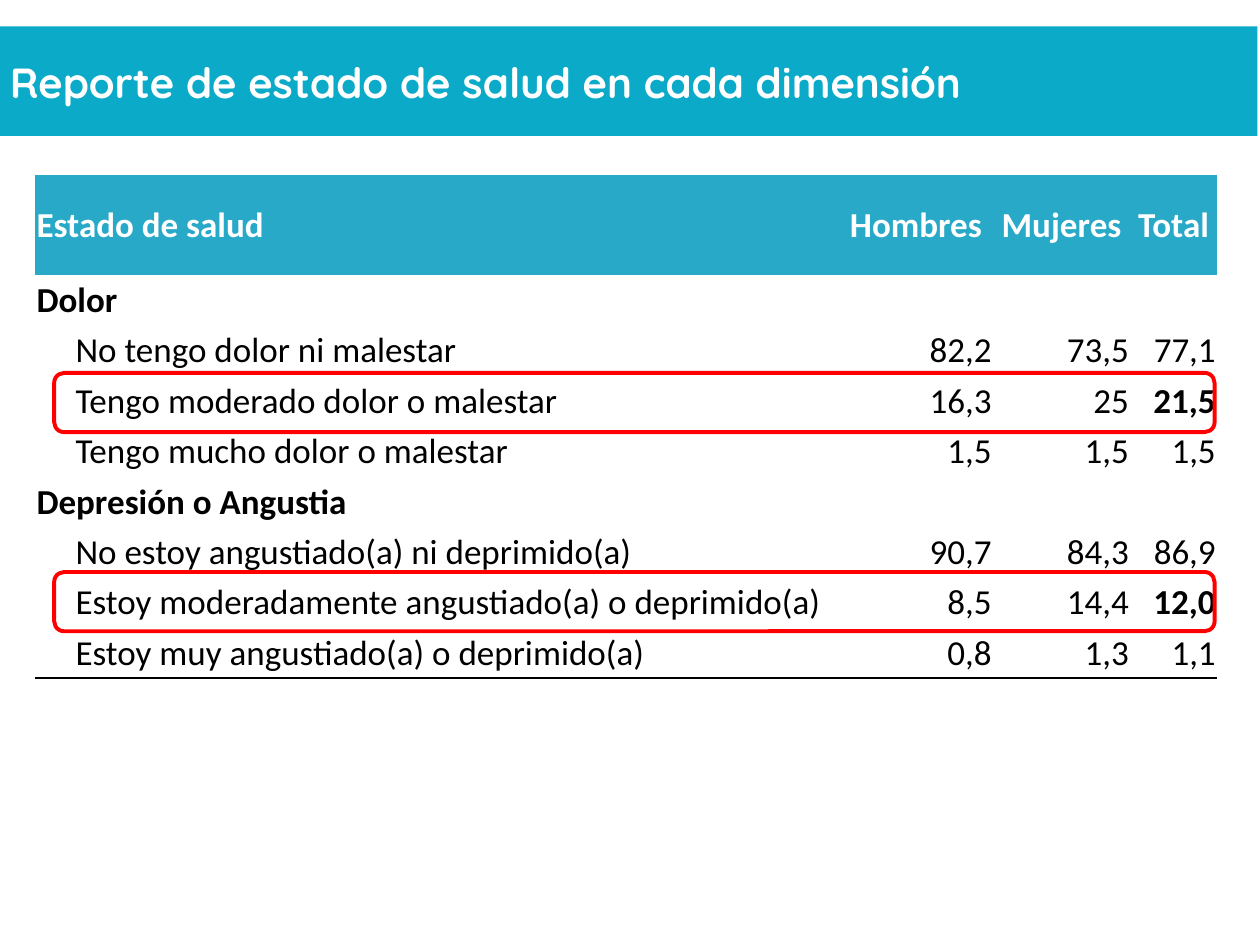
from lxml import etree
from pptx import Presentation
from pptx.dml.color import RGBColor
from pptx.enum import shapes, text
from pptx.oxml import ns
from pptx.util import Inches, Pt

TITLE = "Reporte de estado de salud en cada dimensión"
HEADER = ("Estado de salud", "Hombres", "Mujeres", "Total")
SECTIONS = {
    "Dolor": [
        ("No tengo dolor ni malestar", "82,2", "73,5", "77,1"),
        ("Tengo moderado dolor o malestar", "16,3", "25", "21,5"),
        ("Tengo mucho dolor o malestar", "1,5", "1,5", "1,5"),
    ],
    "Depresión o Angustia": [
        ("No estoy angustiado(a) ni deprimido(a)", "90,7", "84,3", "86,9"),
        ("Estoy moderadamente angustiado(a) o deprimido(a)", "8,5", "14,4", "12,0"),
        ("Estoy muy angustiado(a) o deprimido(a)", "0,8", "1,3", "1,1"),
    ],
}
HIGHLIGHTED_TOTALS = ("21,5", "12,0")
HIGHLIGHT_TOPS = (2.96, 4.54)
COLUMN_WIDTHS = (6.38, 1.22, 1.09, 0.69)
HEADER_HEIGHT, ROW_HEIGHT = 0.79, 0.4
INDENT = 0.32

TITLE_BLUE = RGBColor(0x0A, 0xAA, 0xC8)
HEADER_BLUE = RGBColor(0x28, 0xA9, 0xC8)
WHITE = RGBColor(0xFF, 0xFF, 0xFF)
BLACK = RGBColor(0, 0, 0)
RED = RGBColor(0xFF, 0, 0)
NO_STYLE = "{2D5ABB26-0587-4C30-8999-92F81FD0307C}"

LEFT, CENTER, RIGHT = text.PP_ALIGN.LEFT, text.PP_ALIGN.CENTER, text.PP_ALIGN.RIGHT


def set_attributes(target, values):
    for name, value in values.items():
        setattr(target, name, value)


def write(frame, words, alignment, color, size, name, bold):
    paragraph = frame.paragraphs[0]
    paragraph.alignment = alignment
    run = paragraph.add_run()
    run.text = words
    set_attributes(run.font, {"size": Pt(size), "name": name, "bold": bold})
    run.font.color.rgb = color


def add_box(slide, kind, left, top, width, height):
    shape = slide.shapes.add_shape(
        kind, Inches(left), Inches(top), Inches(width), Inches(height))
    shape.shadow.inherit = False
    return shape


def add_title(slide):
    banner = add_box(slide, shapes.MSO_SHAPE.RECTANGLE, -0.02, 0.21, 10, 0.87)
    banner.fill.solid()
    banner.fill.fore_color.rgb = TITLE_BLUE
    banner.line.fill.background()
    banner.text_frame.vertical_anchor = text.MSO_ANCHOR.MIDDLE
    write(banner.text_frame, TITLE, LEFT, WHITE, 24, "Quicksand", True)


def add_bottom_border(cell):
    line = etree.Element(ns.qn("a:lnB"), w=str(Pt(1)))
    fill = etree.SubElement(line, ns.qn("a:solidFill"))
    etree.SubElement(fill, ns.qn("a:srgbClr"), val=str(BLACK))
    cell._tc.get_or_add_tcPr().insert(0, line)


def add_health_table(slide):
    rows = [HEADER]
    for section, answers in SECTIONS.items():
        rows += [(section, "", "", ""), *answers]
    height = HEADER_HEIGHT + ROW_HEIGHT * (len(rows) - 1)
    frame = slide.shapes.add_table(
        len(rows), len(HEADER), Inches(0.28), Inches(1.39),
        Inches(sum(COLUMN_WIDTHS)), Inches(height))
    table = frame.table
    set_attributes(table, {"first_row": False, "horz_banding": False})
    table._tbl.tblPr.find(ns.qn("a:tableStyleId")).text = NO_STYLE
    for column, width in zip(table.columns, COLUMN_WIDTHS):
        column.width = Inches(width)

    for i, values in enumerate(rows):
        is_header, is_section = i == 0, values[0] in SECTIONS
        table.rows[i].height = Inches(HEADER_HEIGHT if is_header else ROW_HEIGHT)
        for j, value in enumerate(values):
            cell = table.cell(i, j)
            is_answer_label = j == 0 and not (is_header or is_section)
            set_attributes(cell, {
                "margin_left": Inches(INDENT if is_answer_label else 0.01),
                "margin_right": Inches(0.01),
                "margin_top": Inches(0.01),
                "margin_bottom": 0,
                "vertical_anchor": text.MSO_ANCHOR.MIDDLE,
            })
            if is_header:
                cell.fill.solid()
                cell.fill.fore_color.rgb = HEADER_BLUE
            else:
                cell.fill.background()
            if value:
                alignment = LEFT if j == 0 else CENTER if is_header else RIGHT
                bold = is_header or is_section or value in HIGHLIGHTED_TOTALS
                write(cell.text_frame, value, alignment,
                      WHITE if is_header else BLACK, 20, "Calibri", bold)
            if i == len(rows) - 1:
                add_bottom_border(cell)


def add_highlights(slide):
    for top in HIGHLIGHT_TOPS:
        outline = add_box(slide, shapes.MSO_SHAPE.ROUNDED_RECTANGLE, 0.43, top, 9.21, 0.47)
        outline.fill.background()
        outline.line.color.rgb = RED
        outline.line.width = Pt(2.25)


def main():
    presentation = Presentation()
    set_attributes(presentation, {"slide_width": Inches(10), "slide_height": Inches(7.5)})
    slide = presentation.slides.add_slide(presentation.slide_layouts[6])
    add_title(slide)
    add_health_table(slide)
    add_highlights(slide)
    presentation.save("out.pptx")


if __name__ == "__main__":
    main()
